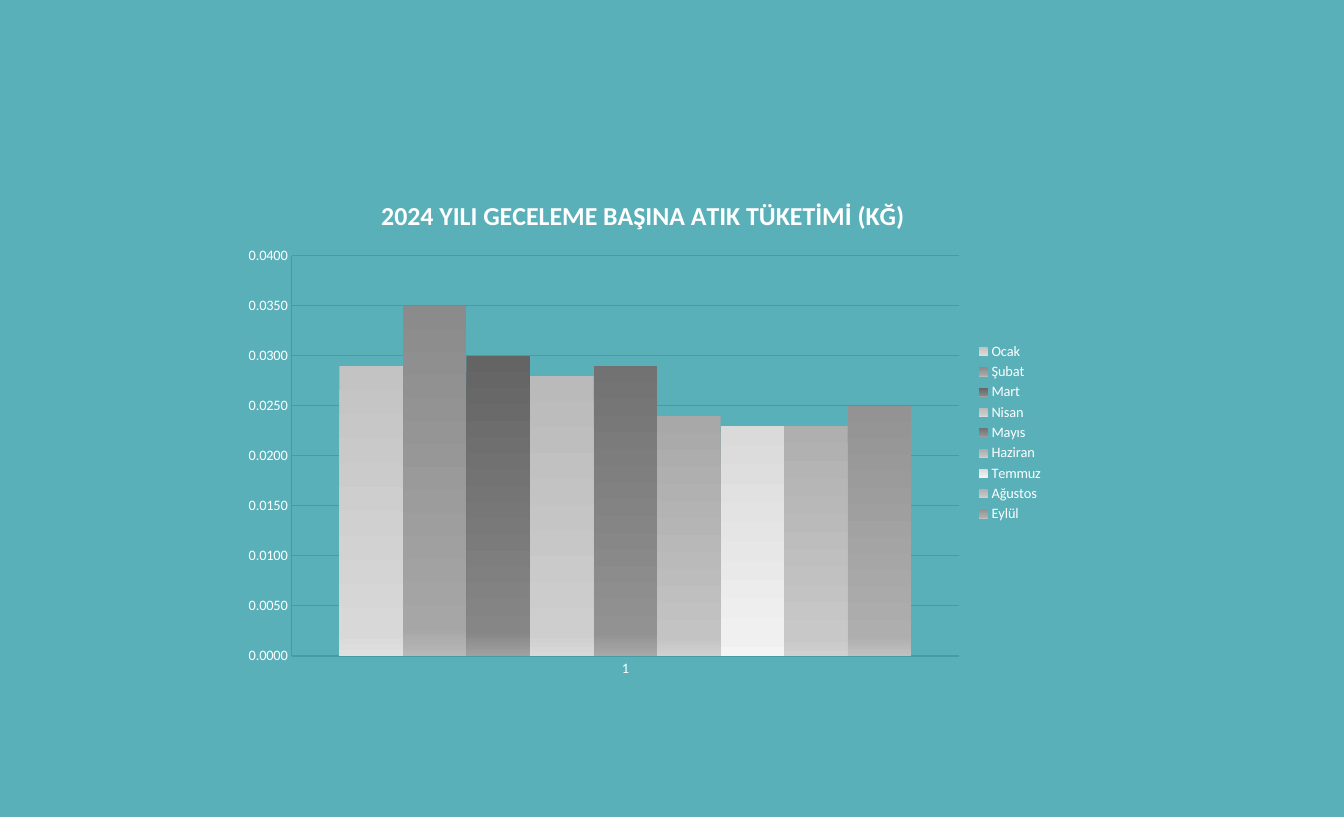
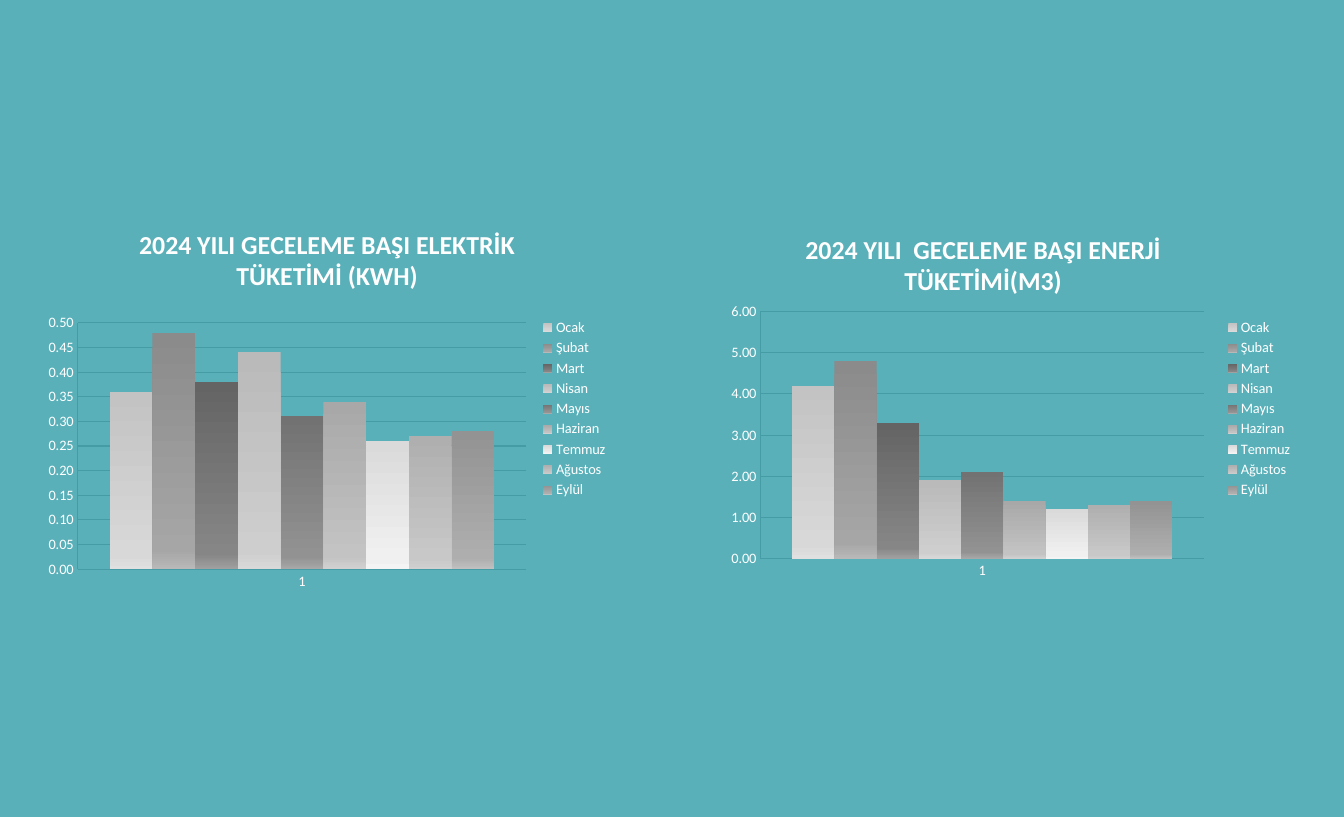
from lxml import etree
from pptx import Presentation
from pptx.chart.data import CategoryChartData
from pptx.dml.color import RGBColor
from pptx.enum.chart import XL_CHART_TYPE, XL_LEGEND_POSITION, XL_TICK_MARK
from pptx.oxml import parse_xml
from pptx.oxml.ns import nsdecls, qn
from pptx.util import Cm, Inches, Pt

COLUMNS = XL_CHART_TYPE.COLUMN_CLUSTERED
LEGEND_RIGHT = XL_LEGEND_POSITION.RIGHT
NO_TICK = XL_TICK_MARK.NONE

SLIDE_WIDTH, SLIDE_HEIGHT = Cm(33), Cm(20.05)
TEAL = RGBColor(0x59, 0xB0, 0xB9)
GRID_TEAL = RGBColor(0x46, 0x9C, 0xA5)
WHITE = RGBColor(0xFF, 0xFF, 0xFF)
FONT = "Calibri"
LABEL_SIZE, TITLE_SIZE = Pt(10), Pt(18)
BLANK_LAYOUT = 6


def grey(level):
    return RGBColor(level, level, level)


MONTH_SHADES = {
    "Ocak": (grey(0xC3), grey(0xD8), grey(0xE0)),
    "Şubat": (grey(0x8B), grey(0xA6), grey(0xB8)),
    "Mart": (grey(0x64), grey(0x86), grey(0xA0)),
    "Nisan": (grey(0xBA), grey(0xCE), grey(0xD8)),
    "Mayıs": (grey(0x72), grey(0x92), grey(0xA8)),
    "Haziran": (grey(0xA8), grey(0xC3), grey(0xD0)),
    "Temmuz": (grey(0xDA), grey(0xF0), grey(0xF4)),
    "Ağustos": (grey(0xAF), grey(0xC8), grey(0xD0)),
    "Eylül": (grey(0x93), grey(0xAE), grey(0xC0)),
}
SHADE_STOPS = (0, 92000, 100000)

WASTE = dict(
    title="2024 YILI GECELEME BAŞINA ATIK TÜKETİMİ (KĞ)",
    values=(0.029, 0.035, 0.03, 0.028, 0.029, 0.024, 0.023, 0.023, 0.025),
    top=0.04, step=0.005, number_format="#,##0.0000",
    box=(2.24, 1.74, 7.95, 4.88), title_at=(1.4, 0.12), plot=(0.58, 0.73, 6.45, 3.87),
)
ELECTRICITY = dict(
    title="2024 YILI GECELEME BAŞI ELEKTRİK TÜKETİMİ (KWH)",
    values=(0.36, 0.48, 0.38, 0.44, 0.31, 0.34, 0.26, 0.27, 0.28),
    top=0.5, step=0.05, number_format="0.00",
    box=(0.35, 2.14, 5.63, 3.62), title_at=(0.95, -0.03), plot=(0.4, 0.98, 4.34, 2.38),
)
ENERGY = dict(
    title="2024 YILI  GECELEME BAŞI ENERJİ TÜKETİMİ(M3)",
    values=(4.2, 4.8, 3.3, 1.9, 2.1, 1.4, 1.2, 1.3, 1.4),
    top=6, step=1, number_format="0.00",
    box=(6.89, 2.14, 5.71, 3.62), title_at=(0.85, 0.05), plot=(0.46, 0.87, 4.29, 2.39),
)
SLIDES = ((WASTE,), (ELECTRICITY, ENERGY))


def shade_bars(series, shades):
    fill = series.format.fill
    fill.gradient()
    fill.gradient_angle = 270
    stops = series.format.fill._xPr.find(qn("a:gradFill")).find(qn("a:gsLst"))
    for stop in list(stops):
        stops.remove(stop)
    for position, shade in zip(SHADE_STOPS, shades):
        stop = etree.SubElement(stops, qn("a:gs"), pos=str(position))
        etree.SubElement(stop, qn("a:srgbClr"), val=str(shade))


def manual_layout(box, lengths, inner=False):
    shares = [length / box[2 + i % 2] for i, length in enumerate(lengths)]
    target = '<c:layoutTarget val="inner"/>' if inner else ""
    modes = '<c:xMode val="edge"/><c:yMode val="edge"/>'
    sizes = "".join(f'<c:{tag} val="{share:.4f}"/>' for tag, share in zip("xywh", shares))
    return parse_xml(
        f'<c:layout {nsdecls("c")}><c:manualLayout>{target}{modes}{sizes}'
        "</c:manualLayout></c:layout>"
    )


def place_layout(parent, layout, index):
    for old in parent.findall(qn("c:layout")):
        parent.remove(old)
    parent.insert(index, layout)


def style_title(chart, title, box, title_at):
    frame = chart.chart_title.text_frame
    frame.text = title
    font = frame.paragraphs[0].runs[0].font
    font.name, font.size, font.bold = FONT, TITLE_SIZE, True
    font.color.rgb = WHITE
    chart.chart_title.include_in_layout = False
    place_layout(chart.chart_title._element, manual_layout(box, title_at), 1)


def style_axes(chart, top, step, number_format):
    for axis in (chart.category_axis, chart.value_axis):
        axis.major_tick_mark = axis.minor_tick_mark = NO_TICK
        axis.format.line.color.rgb = GRID_TEAL
        axis.format.line.width = Pt(0.75)
    scale = chart.value_axis
    scale.minimum_scale, scale.maximum_scale, scale.major_unit = 0, top, step
    scale.tick_labels.number_format = number_format
    scale.tick_labels.number_format_is_linked = False
    scale.has_major_gridlines = True
    scale.major_gridlines.format.line.color.rgb = GRID_TEAL
    scale.major_gridlines.format.line.width = Pt(0.75)


def add_month_chart(slide, title, values, top, step, number_format, box, title_at, plot):
    data = CategoryChartData(number_format=number_format)
    data.categories = ["1"]
    for month, value in zip(MONTH_SHADES, values):
        data.add_series(month, [value])
    chart = slide.shapes.add_chart(COLUMNS, *map(Inches, box), data).chart
    chart.font.name, chart.font.size = FONT, LABEL_SIZE
    chart.font.color.rgb = WHITE
    style_title(chart, title, box, title_at)
    style_axes(chart, top, step, number_format)
    chart.has_legend = True
    chart.legend.position = LEGEND_RIGHT
    chart.legend.include_in_layout = False
    bars = chart.plots[0]
    bars.gap_width, bars.overlap, bars.vary_by_categories = 150, 0, False
    for series, shades in zip(bars.series, MONTH_SHADES.values()):
        shade_bars(series, shades)
    plot_area = chart._chartSpace.chart.plotArea
    place_layout(plot_area, manual_layout(box, plot, inner=True), 0)


def main():
    deck = Presentation()
    deck.slide_width, deck.slide_height = SLIDE_WIDTH, SLIDE_HEIGHT
    background = deck.slide_master.background.fill
    background.solid()
    background.fore_color.rgb = TEAL
    for charts in SLIDES:
        slide = deck.slides.add_slide(deck.slide_layouts[BLANK_LAYOUT])
        for chart in charts:
            add_month_chart(slide, **chart)
    deck.save("out.pptx")


if __name__ == "__main__":
    main()
